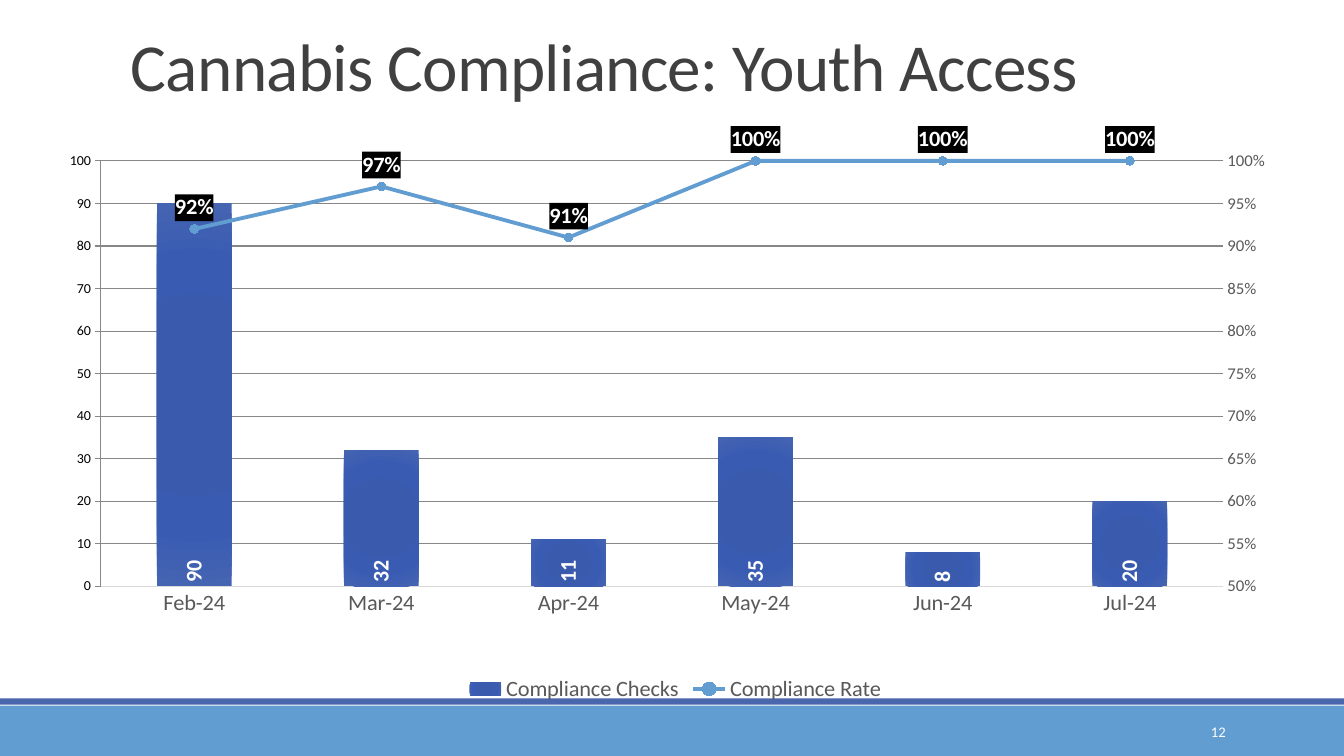
from dataclasses import dataclass

from pptx import Presentation
from pptx.chart.axis import ValueAxis
from pptx.chart.data import CategoryChartData
from pptx.dml.color import RGBColor
from pptx.enum.chart import (
    XL_CHART_TYPE as ChartType, XL_LABEL_POSITION as LabelPos,
    XL_LEGEND_POSITION as LegendPos, XL_MARKER_STYLE as Marker,
    XL_TICK_MARK as Tick)
from pptx.enum.shapes import MSO_SHAPE as Shape
from pptx.enum.text import MSO_ANCHOR as Anchor, PP_ALIGN as Align
from pptx.oxml import parse_xml
from pptx.oxml.ns import nsdecls, qn
from pptx.util import Cm, Pt


@dataclass(frozen=True)
class Theme:
    font: str = "Calibri"
    title: str = "404040"
    text: str = "595959"
    grid: str = "D9D9D9"
    white: str = "FFFFFF"
    black: str = "000000"
    band: str = "629DD1"
    rule: str = "4A66AC"
    marker: str = "4E97D8"
    bar_stops: tuple = ((0, "3759AE"), (34, "3A5BAD"), (70, "395BB2"), (100, "4564B1"))
    title_size: float = 48
    label_size: float = 16
    axis_size: float = 12
    number_size: float = 10.5


T = Theme()
MONTHS = [f"{m}-24" for m in ("Feb", "Mar", "Apr", "May", "Jun", "Jul")]
CHECKS = (90, 32, 11, 35, 8, 20)
RATES = (0.92, 0.97, 0.91, 1, 1, 1)


def rgb(color):
    return RGBColor.from_string(color)


def set_font(font, size, color, bold=False):
    font.name, font.size, font.bold = T.font, Pt(size), bold
    font.color.rgb = rgb(color)


def add_band(s, top, height, color):
    band = s.shapes.add_shape(Shape.RECTANGLE, 0, top, Cm(33.87), height)
    band.shadow.inherit = False
    band.fill.solid()
    band.fill.fore_color.rgb = rgb(color)
    band.line.fill.background()


def add_text(s, box, text, size, color, align=Align.LEFT, anchor=Anchor.TOP):
    tf = s.shapes.add_textbox(*map(Cm, box)).text_frame
    tf.word_wrap = True
    tf.vertical_anchor = anchor
    p = tf.paragraphs[0]
    p.text, p.alignment = text, align
    set_font(p.font, size, color)
    return p


def style_axis(axis, size, line=None):
    axis.major_tick_mark = axis.minor_tick_mark = Tick.NONE
    set_font(axis.tick_labels.font, size, T.text)
    if line:
        axis.format.line.color.rgb = rgb(line)
        axis.format.line.width = Pt(1)
    else:
        axis.format.line.fill.background()


def scale_axis(axis, low, high, step, number_format):
    axis.minimum_scale, axis.maximum_scale, axis.major_unit = low, high, step
    axis.tick_labels.number_format = number_format
    axis.tick_labels.number_format_is_linked = False


def set_plot_layout(plot_area, x, y, w, h):
    for old in plot_area.findall(qn("c:layout")):
        plot_area.remove(old)
    sizes = "".join(f'<c:{k} val="{v}"/>' for k, v in zip("xywh", (x, y, w, h)))
    plot_area.insert(0, parse_xml(
        f'<c:layout {nsdecls("c")}><c:manualLayout><c:layoutTarget val="inner"/>'
        f'<c:xMode val="edge"/><c:yMode val="edge"/>{sizes}</c:manualLayout></c:layout>'))


def move_to_right_axis(plot_area):
    """Turn the second bar series into a line on its own axis, and return that axis."""
    bars = plot_area.find(qn("c:barChart"))
    ser = bars.findall(qn("c:ser"))[1]
    for bar_only in ser.findall(qn("c:invertIfNegative")):
        ser.remove(bar_only)
    lines = parse_xml(
        f'<c:lineChart {nsdecls("c")}><c:grouping val="standard"/><c:varyColors val="0"/>'
        '<c:marker val="1"/><c:axId val="5001"/><c:axId val="5002"/></c:lineChart>')
    lines.insert(2, ser)
    bars.addnext(lines)

    def axis(tag, own, other, hidden, side, crosses):
        return parse_xml(
            f'<c:{tag} {nsdecls("c")}><c:axId val="{own}"/>'
            '<c:scaling><c:orientation val="minMax"/></c:scaling>'
            f'<c:delete val="{hidden}"/><c:axPos val="{side}"/>'
            '<c:tickLblPos val="nextTo"/>'
            f'<c:crossAx val="{other}"/><c:crosses val="{crosses}"/></c:{tag}>')

    right = axis("valAx", 5002, 5001, 0, "r", "max")
    last = plot_area.findall(qn("c:valAx"))[-1]
    last.addnext(right)
    right.addnext(axis("catAx", 5001, 5002, 1, "b", "autoZero"))
    return ValueAxis(right)


def label_series(series, position, number_format):
    """Show the values of a series, and return the text properties of its labels."""
    labels = series.data_labels
    labels.show_value = True
    labels.number_format, labels.number_format_is_linked = number_format, False
    set_font(labels.font, T.label_size, T.white, bold=True)
    labels.position = position
    return labels._element.find(qn("c:txPr"))


def style_checks(series):
    series.invert_if_negative = False
    series.format.fill.solid()
    solid = series._element.find(qn("c:spPr")).find(qn("a:solidFill"))
    stops = "".join(f'<a:gs pos="{pos * 1000}"><a:srgbClr val="{color}"/></a:gs>'
                    for pos, color in T.bar_stops)
    solid.getparent().replace(solid, parse_xml(
        f'<a:gradFill {nsdecls("a")}><a:gsLst>{stops}</a:gsLst><a:path path="circle">'
        '<a:fillToRect l="100000" t="100000" r="100000" b="100000"/></a:path></a:gradFill>'))
    text = label_series(series, LabelPos.INSIDE_BASE, "0")
    body = text.find(qn("a:bodyPr"))
    body.set("rot", "-5400000")
    body.set("vert", "horz")


def style_rate(series):
    series.smooth = False
    series.format.line.color.rgb = rgb(T.band)
    series.format.line.width = Pt(2.75)
    series.marker.style, series.marker.size = Marker.CIRCLE, 6
    series.marker.format.fill.solid()
    series.marker.format.fill.fore_color.rgb = rgb(T.marker)
    series.marker.format.line.color.rgb = rgb(T.band)
    text = label_series(series, LabelPos.ABOVE, "0%")
    text.addprevious(parse_xml(
        f'<c:spPr {nsdecls("c", "a")}><a:solidFill><a:srgbClr val="{T.black}"/>'
        '</a:solidFill></c:spPr>'))


def add_compliance_chart(s, box):
    data = CategoryChartData()
    data.categories = MONTHS
    data.add_series("Compliance Checks", CHECKS, "0")
    data.add_series("Compliance Rate", RATES, "0%")
    chart = s.shapes.add_chart(ChartType.COLUMN_CLUSTERED, *map(Cm, box), data).chart
    set_font(chart.font, 10, T.black)
    chart.has_title = False
    chart.has_legend = True
    chart.legend.position, chart.legend.include_in_layout = LegendPos.BOTTOM, False
    set_font(chart.legend.font, T.label_size, T.text)

    plot_area = chart._chartSpace.chart.plotArea
    right_axis = move_to_right_axis(plot_area)
    set_plot_layout(plot_area, 0.046, 0.039, 0.887, 0.749)

    style_axis(chart.category_axis, T.label_size, T.grid)
    style_axis(chart.value_axis, T.axis_size)
    scale_axis(chart.value_axis, 0, 100, 10, "0")
    grid = chart.value_axis.major_gridlines.format.line
    grid.color.rgb, grid.width = rgb(T.grid), Pt(0.75)
    style_axis(right_axis, T.axis_size)
    scale_axis(right_axis, 0.5, 1, 0.05, "0%")

    bars, lines = chart.plots
    bars.gap_width, bars.vary_by_categories = 150, False
    style_checks(bars.series[0])
    style_rate(lines.series[0])


def main():
    prs = Presentation()
    prs.slide_width, prs.slide_height = Cm(33.87), Cm(19.05)
    s = prs.slides.add_slide(prs.slide_layouts[6])
    add_band(s, Cm(17.78), Cm(1.27), T.band)
    add_band(s, Cm(17.6), Cm(0.16), T.rule)
    title = add_text(s, (3.05, 0.79, 27.94, 4.04), "Cannabis Compliance: Youth Access",
                     T.title_size, T.title)
    title.line_spacing = 0.85
    title.runs[0].font._element.set("spc", "-50")
    add_compliance_chart(s, (1.07, 3.18, 31.9, 14.63))
    add_text(s, (27.51, 17.93, 3.63, 1.02), "12", T.number_size, T.white,
             Align.RIGHT, Anchor.MIDDLE)
    prs.save("out.pptx")


if __name__ == "__main__":
    main()
